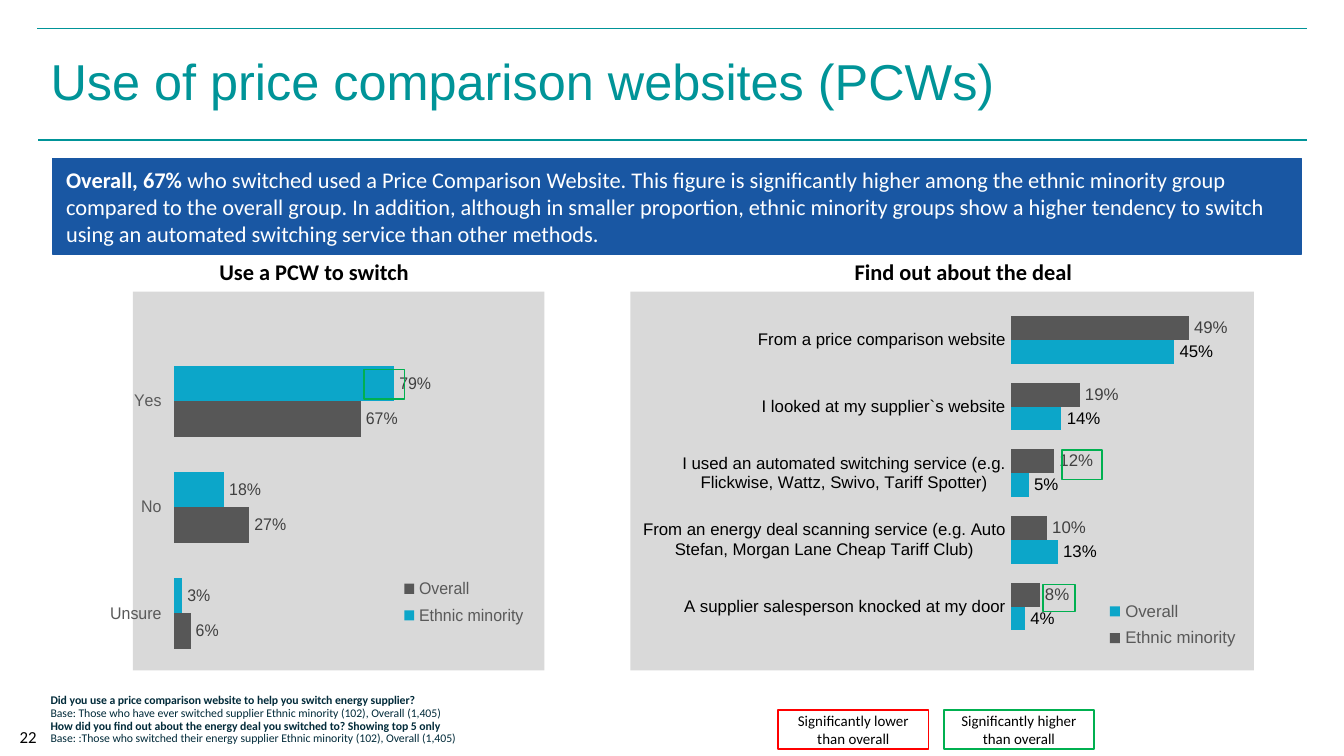
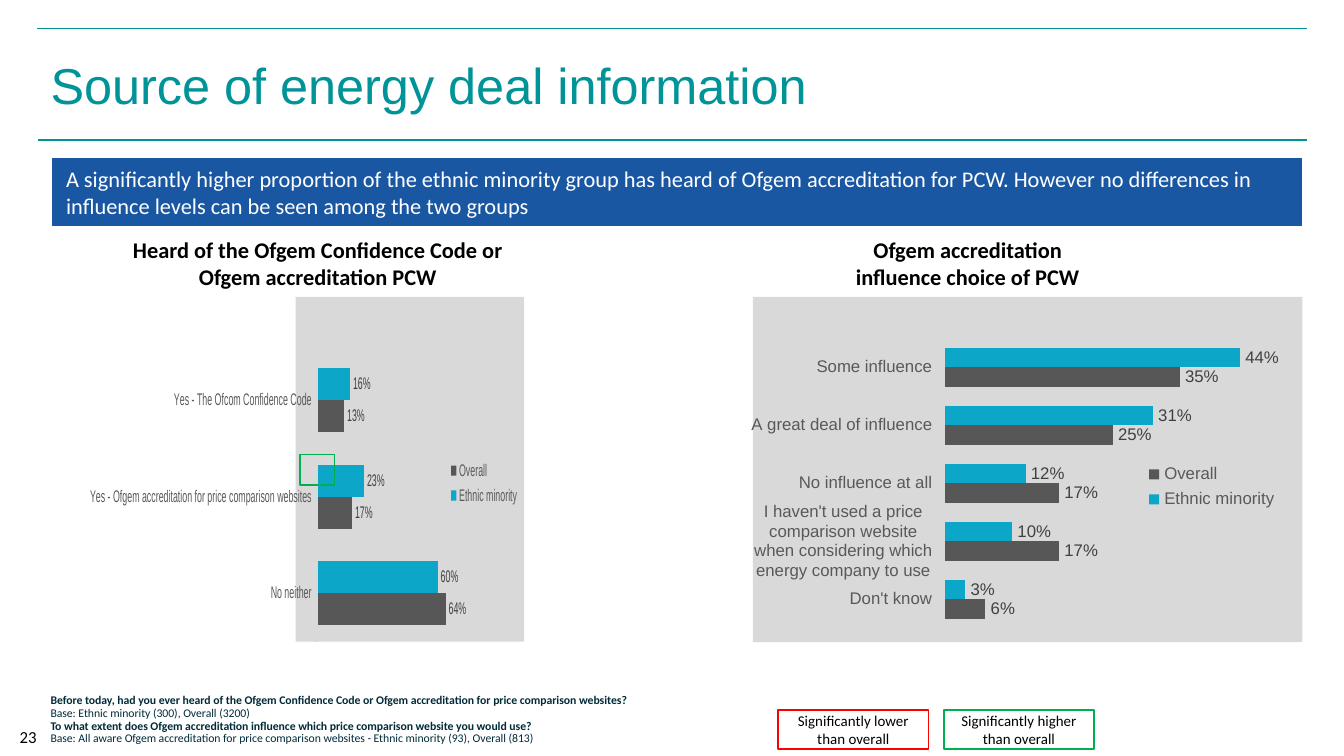
from lxml import etree
from pptx import Presentation
from pptx.chart.data import CategoryChartData
from pptx.dml.color import RGBColor
from pptx.enum.chart import XL_CHART_TYPE, XL_LABEL_POSITION, XL_LEGEND_POSITION, XL_TICK_MARK
from pptx.enum.shapes import MSO_CONNECTOR, MSO_SHAPE
from pptx.enum.text import MSO_ANCHOR, PP_ALIGN
from pptx.oxml import parse_xml
from pptx.oxml.ns import nsdecls, qn
from pptx.util import Pt

BAR_CLUSTERED = XL_CHART_TYPE.BAR_CLUSTERED
OUTSIDE_END = XL_LABEL_POSITION.OUTSIDE_END
LEGEND_RIGHT = XL_LEGEND_POSITION.RIGHT
TICK_NONE, TICK_OUTSIDE = XL_TICK_MARK.NONE, XL_TICK_MARK.OUTSIDE
RECTANGLE, STRAIGHT = MSO_SHAPE.RECTANGLE, MSO_CONNECTOR.STRAIGHT
TOP, MIDDLE = MSO_ANCHOR.TOP, MSO_ANCHOR.MIDDLE
LEFT, CENTER = PP_ALIGN.LEFT, PP_ALIGN.CENTER

TEAL = RGBColor(0x00, 0x94, 0x98)
BAND_BLUE = RGBColor(0x19, 0x57, 0xA3)
NAVY = RGBColor(0x02, 0x2B, 0x3A)
CYAN = RGBColor(0x0C, 0xA6, 0xC9)
DARK_GREY = RGBColor(0x57, 0x57, 0x57)
AXIS_GREY = RGBColor(0x59, 0x59, 0x59)
LABEL_GREY = RGBColor(0x40, 0x40, 0x40)
LIGHT_GREY = RGBColor(0xD9, 0xD9, 0xD9)
RED = RGBColor(0xFF, 0x00, 0x00)
GREEN = RGBColor(0x00, 0xB0, 0x50)
BLACK = RGBColor(0x00, 0x00, 0x00)
WHITE = RGBColor(0xFF, 0xFF, 0xFF)


def add_text(slide, box, paragraphs, size=9, font="Calibri", color=BLACK, align=LEFT,
             anchor=TOP, spacing=None, fill=None, line=None, line_width=0.85):
    """Add a box of text; each paragraph is a list of (text, bold) runs."""
    lengths = [Pt(value) for value in box]
    if line is None:
        shape = slide.shapes.add_textbox(*lengths)
    else:
        shape = slide.shapes.add_shape(RECTANGLE, *lengths)
        shape.shadow.inherit = False
        shape.line.color.rgb = line
        shape.line.width = Pt(line_width)
        if fill is None:
            shape.fill.background()
        else:
            shape.fill.solid()
            shape.fill.fore_color.rgb = fill
    frame = shape.text_frame
    frame.word_wrap = True
    frame.vertical_anchor = anchor
    for index, runs in enumerate(paragraphs):
        paragraph = frame.add_paragraph() if index else frame.paragraphs[0]
        paragraph.alignment = align
        paragraph.line_spacing = spacing
        for text, bold in runs:
            run = paragraph.add_run()
            run.text = text
            run.font.name = font
            run.font.size = Pt(size)
            run.font.bold = bold
            run.font.color.rgb = color


def add_bar_chart(slide, box, categories, series, maximum, plot, legend,
                  gap=100, tick=TICK_OUTSIDE, category_color=AXIS_GREY):
    """Add a bar chart; plot and legend are x, y, width, height as shares of the chart."""
    data = CategoryChartData(number_format="0%")
    data.categories = categories
    for name, values, _, _ in series:
        data.add_series(name, values)
    lengths = [Pt(value) for value in box]
    chart = slide.shapes.add_chart(BAR_CLUSTERED, *lengths, data).chart
    chart.has_title = False
    chart.font.name = "Arial"
    chart.font.size = Pt(9)
    chart.font.color.rgb = BLACK

    axis = chart.category_axis
    axis.reverse_order = True
    axis.major_tick_mark = tick
    axis.minor_tick_mark = TICK_NONE
    axis.format.line.color.rgb = LIGHT_GREY
    axis.format.line.width = Pt(0.75)
    axis.tick_labels.font.size = Pt(9)
    axis.tick_labels.font.name = "Arial"
    axis.tick_labels.font.color.rgb = category_color
    chart.value_axis.visible = False
    chart.value_axis.has_major_gridlines = False
    chart.value_axis.minimum_scale = 0
    chart.value_axis.maximum_scale = maximum

    bars = chart.plots[0]
    bars.gap_width = gap
    bars.overlap = 0
    bars.vary_by_categories = False
    for bar_series, (_, _, color, label_color) in zip(bars.series, series):
        bar_series.format.fill.solid()
        bar_series.format.fill.fore_color.rgb = color
        labels = bar_series.data_labels
        labels.show_value = True
        labels.position = OUTSIDE_END
        labels.number_format = "0%"
        labels.number_format_is_linked = False
        labels.font.size = Pt(9)
        labels.font.name = "Arial"
        labels.font.color.rgb = label_color

    chart.has_legend = True
    chart.legend.position = LEGEND_RIGHT
    chart.legend.include_in_layout = False
    chart.legend.font.size = Pt(9)
    chart.legend.font.name = "Arial"
    chart.legend.font.color.rgb = AXIS_GREY

    chart_element = chart.element.find(qn("c:chart"))
    plot_area = chart_element.find(qn("c:plotArea"))
    legend_element = chart_element.find(qn("c:legend"))
    for parent, place in ((plot_area, plot), (legend_element, legend)):
        for old_layout in parent.findall(qn("c:layout")):
            parent.remove(old_layout)
        layout = parse_xml(f"<c:layout {nsdecls('c')}><c:manualLayout/></c:layout>")
        settings = [("xMode", "edge"), ("yMode", "edge"), *zip("xywh", place)]
        if parent is plot_area:
            settings.insert(0, ("layoutTarget", "inner"))
            parent.insert(0, layout)
        else:
            parent.find(qn("c:overlay")).addprevious(layout)
        for tag, value in settings:
            etree.SubElement(layout[0], qn(f"c:{tag}")).set("val", str(value))
    chart_element.addnext(parse_xml(
        f'<c:spPr {nsdecls("c", "a")}><a:solidFill><a:srgbClr val="{LIGHT_GREY}"/>'
        "</a:solidFill><a:ln><a:noFill/></a:ln></c:spPr>"))


SLIDES = [
    dict(
        number="22", title="Use of price comparison websites (PCWs)", title_top=15,
        band_height=51,
        band=[("Overall, 67% ", True),
              ("who switched used a Price Comparison Website. This figure is significantly "
               "higher among the ethnic minority group compared to the overall group. In "
               "addition, although in smaller proportion, ethnic minority groups show a higher "
               "tendency to switch using an automated switching service than other methods.",
               False)],
        headings=[("Use a PCW to switch", (98.3, 134.6, 140, 22)),
                  ("Find out about the deal", (446.2, 134.6, 140, 22))],
        charts=[
            dict(box=(59, 156.2, 232.6, 203),
                 categories=["Yes", "No", "Unsure"],
                 series=[("Ethnic minority", (0.79, 0.18, 0.03), CYAN, LABEL_GREY),
                         ("Overall", (0.67, 0.27, 0.06), DARK_GREY, LABEL_GREY)],
                 maximum=0.9, plot=(0.1, 0.15, 0.61, 0.84), legend=(0.65, 0.74, 0.31, 0.16)),
            dict(box=(337.7, 156.2, 334, 203),
                 categories=[
                     "From a price comparison website",
                     "I looked at my supplier`s website",
                     "I used an automated switching service (e.g. Flickwise, Wattz, Swivo, "
                     "Tariff Spotter)",
                     "From an energy deal scanning service (e.g. Auto Stefan, Morgan Lane "
                     "Cheap Tariff Club)",
                     "A supplier salesperson knocked at my door"],
                 series=[("Ethnic minority", (0.49, 0.19, 0.12, 0.1, 0.08), DARK_GREY, LABEL_GREY),
                         ("Overall", (0.45, 0.14, 0.05, 0.13, 0.04), CYAN, BLACK)],
                 maximum=0.6, plot=(0.61, 0.04, 0.35, 0.88), legend=(0.76, 0.8, 0.22, 0.16),
                 gap=80, tick=TICK_NONE, category_color=BLACK)],
        markers=[(195.1, 198, 21.6, 15.8), (558.7, 313.2, 17.3, 14.4),
                 (568.8, 241.2, 21.6, 15.8)],
        notes_width=323,
        notes=["Did you use a price comparison website to help you switch energy supplier?",
               "Base: Those who have ever switched supplier Ethnic minority (102), Overall (1,405)",
               "How did you find out about the energy deal you switched to? Showing top 5 only",
               "Base: :Those who switched their energy supplier Ethnic minority (102), "
               "Overall (1,405)"]),
    dict(
        number="23", title="Source of energy deal information", title_top=17.3,
        band_height=36,
        band=[("A significantly higher proportion of the ethnic minority group has heard of Ofgem "
               "accreditation for PCW. However no differences in influence levels can be seen "
               "among the two groups", False)],
        headings=[("Heard of the Ofgem Confidence Code or Ofgem accreditation PCW",
                   (54, 123.1, 232.6, 36)),
                  ("Ofgem accreditation influence choice of PCW", (450.7, 123.1, 135.4, 36))],
        charts=[
            dict(box=(48.2, 159.1, 232.6, 185),
                 categories=["Yes - The Ofcom Confidence Code",
                             "Yes - Ofgem accreditation for price comparison websites",
                             "No neither"],
                 series=[("Ethnic minority", (0.16, 0.23, 0.6), CYAN, LABEL_GREY),
                         ("Overall", (0.13, 0.17, 0.64), DARK_GREY, LABEL_GREY)],
                 maximum=0.7, plot=(0.1, 0.16, 0.61, 0.84), legend=(0.67, 0.46, 0.31, 0.16)),
            dict(box=(402.5, 159.1, 295.2, 185),
                 categories=["Some influence", "A great deal of influence",
                             "No influence at all",
                             "I haven't used a price comparison website when considering which "
                             "energy company to use",
                             "Don't know"],
                 series=[("Ethnic minority", (0.44, 0.31, 0.12, 0.1, 0.03), CYAN, LABEL_GREY),
                         ("Overall", (0.35, 0.25, 0.17, 0.17, 0.06), DARK_GREY, LABEL_GREY)],
                 maximum=0.5, plot=(0.35, 0.12, 0.61, 0.84), legend=(0.71, 0.47, 0.25, 0.16))],
        markers=[(160.6, 243.4, 18.7, 16.6)],
        notes_width=360,
        notes=["Before today, had you ever heard of the Ofgem Confidence Code or Ofgem "
               "accreditation for price comparison websites?",
               "Base: Ethnic minority (300), Overall (3200)",
               "To what extent does Ofgem accreditation influence which price comparison website "
               "you would use?",
               "Base: All aware Ofgem accreditation for price comparison websites - "
               "Ethnic minority (93), Overall (813)"]),
]

presentation = Presentation()
presentation.slide_width = Pt(720)
presentation.slide_height = Pt(405)

for content in SLIDES:
    slide = presentation.slides.add_slide(presentation.slide_layouts[6])

    for left, top in ((20.4, 75), (20, 15.2)):
        rule = slide.shapes.add_connector(STRAIGHT, Pt(left), Pt(top), Pt(left + 680), Pt(top))
        rule.line.color.rgb = TEAL
        rule.line.width = Pt(0.75)
        etree.SubElement(rule.element.spPr, qn("a:effectLst"))

    add_text(slide, (20, content["title_top"], 680.4, 59.8), [[(content["title"], False)]],
             size=27, font="Arial", color=TEAL, anchor=MIDDLE, spacing=0.9)
    add_text(slide, (20, 368.6, content["notes_width"], 36.7),
             [[(note, index % 2 == 0)] for index, note in enumerate(content["notes"])],
             size=6.3, color=NAVY, spacing=0.9)
    add_text(slide, (0, 383.8, 30.2, 21.6), [[(content["number"], False)]],
             align=CENTER, anchor=MIDDLE)

    for chart in content["charts"]:
        add_bar_chart(slide, **chart)
    for heading, box in content["headings"]:
        add_text(slide, box, [[(heading, True)]], size=12, align=CENTER)

    for left, word, color in ((416.9, "lower", RED), (505.6, "higher", GREEN)):
        add_text(slide, (left, 380.4, 80.6, 20.9),
                 [[(f"Significantly {word} than overall", False)]],
                 size=8, align=CENTER, anchor=MIDDLE, line=color)
    for box in content["markers"]:
        add_text(slide, box, [], line=GREEN)

    add_text(slide, (28.3, 85, 669, content["band_height"]), [content["band"]],
             size=12, color=WHITE, anchor=MIDDLE, fill=BAND_BLUE, line=BAND_BLUE,
             line_width=0.75)

presentation.save("out.pptx")
